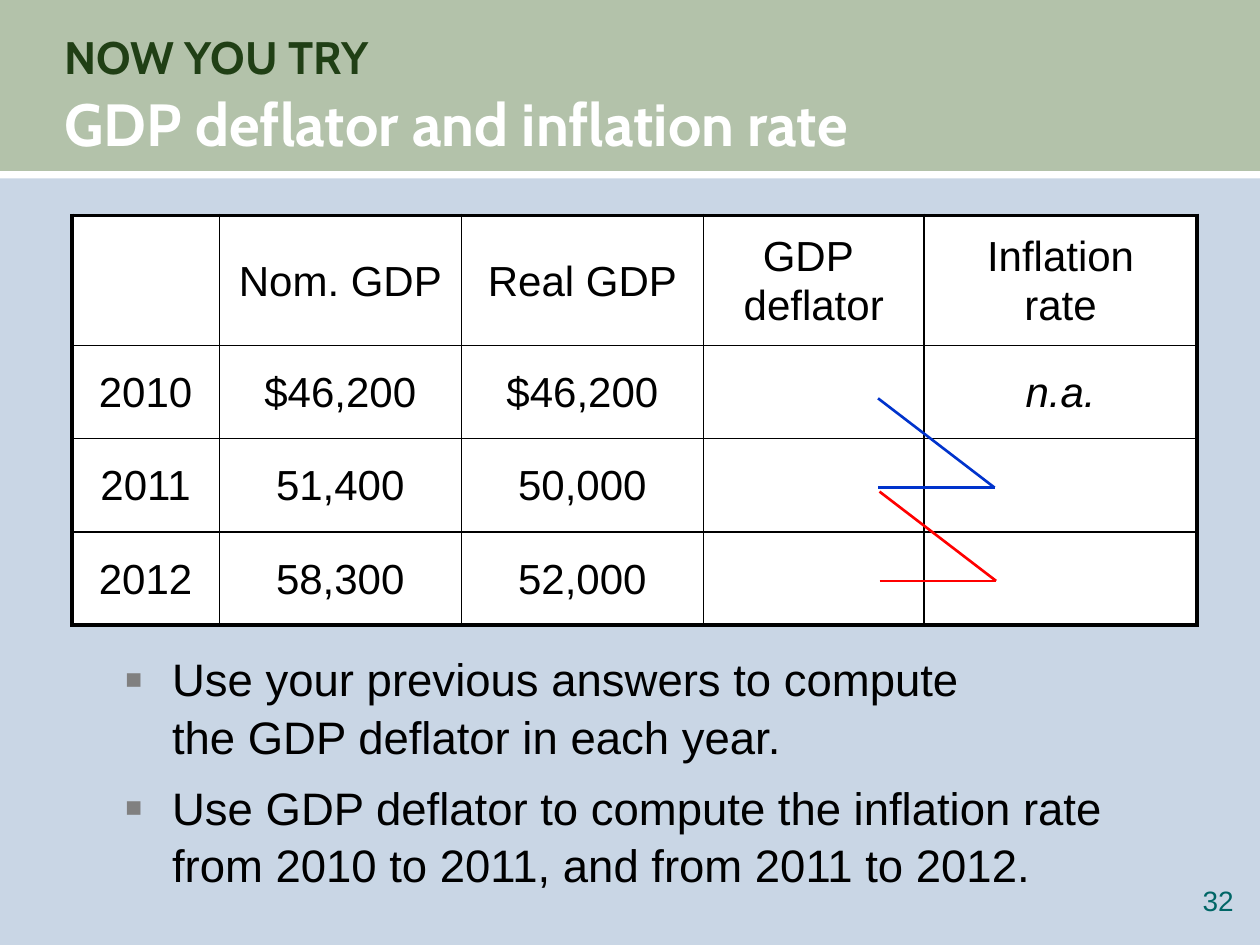
"""Build the exercise slide on the GDP deflator and the inflation rate."""
from dataclasses import dataclass

from lxml.etree import SubElement
from pptx import Presentation
from pptx.dml.color import RGBColor
from pptx.enum.shapes import MSO_CONNECTOR, MSO_SHAPE
from pptx.enum.text import MSO_ANCHOR, PP_ALIGN
from pptx.oxml.ns import qn
from pptx.slide import Slide
from pptx.table import _Cell
from pptx.text.text import TextFrame
from pptx.util import Cm, Pt


@dataclass(frozen=True)
class Theme:
    backdrop: str = "C9D6E5"
    header: str = "B3C2AA"
    white: str = "FFFFFF"
    kicker: str = "203F15"
    ink: str = "000000"
    bullet: str = "808080"
    page: str = "006666"
    first_period: str = "0033CC"
    second_period: str = "FF0000"
    heading_font: str = "Cabin"
    body_font: str = "Arial"
    heading_size: int = 34
    body_size: int = 26
    table_size: int = 24
    page_size: int = 16
    outer_border: float = 2.25
    inner_border: float = 1
    pointer_width: float = 1.5


@dataclass(frozen=True)
class Box:
    left: float
    top: float
    width: float
    height: float

    def lengths(self) -> tuple[Cm, Cm, Cm, Cm]:
        return Cm(self.left), Cm(self.top), Cm(self.width), Cm(self.height)


@dataclass(frozen=True)
class Pointer:
    left: float
    top: float
    colour: str


THEME = Theme()
COLUMN_WIDTHS = (2.97, 4.88, 4.88, 4.45, 5.5)
HEADER_HEIGHT, YEAR_HEIGHT = 2.62, 1.88
POINTER_WIDTH, POINTER_DROP = 2.35, 1.8
GDP_ROWS = (
    ("", "Nom. GDP", "Real GDP", "GDP \ndeflator", "Inflation\nrate"),
    ("2010", "$46,200", "$46,200", "", "n.a."),
    ("2011", "51,400", "50,000", "", ""),
    ("2012", "58,300", "52,000", "", ""),
)
POINTERS = (
    Pointer(17.7, 8.03, THEME.first_period),
    Pointer(17.73, 8.03 + YEAR_HEIGHT, THEME.second_period),
)
TASKS = (
    "Use your previous answers to compute \nthe GDP deflator in each year.",
    "Use GDP deflator to compute the inflation rate from 2010 to 2011, and from 2011 to 2012.",
)


def write(frame: TextFrame, text: str, *, size: float, colour: str = THEME.ink,
          font: str = THEME.body_font, bold: bool = False, italic: bool = False,
          align: PP_ALIGN = PP_ALIGN.LEFT, spacing: float = 1.05,
          before: float = 0, bulleted: bool = False) -> None:
    paragraph = frame.paragraphs[0]
    if paragraph.runs:
        paragraph = frame.add_paragraph()
    paragraph.alignment = align
    paragraph.line_spacing = spacing
    paragraph.space_before = Pt(before)
    for number, line in enumerate(text.split("\n")):
        if number:
            paragraph.add_line_break()
        run = paragraph.add_run()
        run.text = line
        run.font.name, run.font.size = font, Pt(size)
        run.font.bold, run.font.italic = bold, italic
        run.font.color.rgb = RGBColor.from_string(colour)
    if bulleted:
        properties = paragraph._p.get_or_add_pPr()
        properties.set("marL", str(Cm(0.96)))
        properties.set("indent", str(-Cm(0.96)))
        tint = SubElement(properties, qn("a:buClr"))
        SubElement(tint, qn("a:srgbClr"), val=THEME.bullet)
        SubElement(properties, qn("a:buSzPct"), val="120000")
        SubElement(properties, qn("a:buFont"), typeface=THEME.body_font)
        SubElement(properties, qn("a:buChar"), char="▪")


def add_frame(slide: Slide, box: Box, *, inset: bool = False,
              anchor: MSO_ANCHOR = MSO_ANCHOR.TOP) -> TextFrame:
    frame = slide.shapes.add_textbox(*box.lengths()).text_frame
    frame.word_wrap = True
    frame.vertical_anchor = anchor
    if not inset:
        frame.margin_left = frame.margin_right = 0
        frame.margin_top = frame.margin_bottom = 0
    return frame


def add_band(slide: Slide, box: Box, colour: str) -> None:
    band = slide.shapes.add_shape(MSO_SHAPE.RECTANGLE, *box.lengths())
    band.shadow.inherit = False
    band.fill.solid()
    band.fill.fore_color.rgb = RGBColor.from_string(colour)
    band.line.fill.background()


def style_cell(cell: _Cell, outer_sides: dict[str, bool]) -> None:
    properties = cell._tc.get_or_add_tcPr()
    for side, is_outer in outer_sides.items():
        width = THEME.outer_border if is_outer else THEME.inner_border
        border = SubElement(properties, qn(f"a:ln{side}"), w=str(Pt(width)))
        fill = SubElement(border, qn("a:solidFill"))
        SubElement(fill, qn("a:srgbClr"), val=THEME.ink)
    cell.fill.solid()
    cell.fill.fore_color.rgb = RGBColor.from_string(THEME.white)
    cell.vertical_anchor = MSO_ANCHOR.MIDDLE


def add_gdp_table(slide: Slide) -> None:
    heights = (HEADER_HEIGHT,) + (YEAR_HEIGHT,) * (len(GDP_ROWS) - 1)
    box = Box(1.45, 4.34, sum(COLUMN_WIDTHS), sum(heights))
    table = slide.shapes.add_table(len(heights), len(COLUMN_WIDTHS), *box.lengths()).table
    table.first_row = table.horz_banding = False
    for column, width in zip(table.columns, COLUMN_WIDTHS):
        column.width = Cm(width)
    for row, height in zip(table.rows, heights):
        row.height = Cm(height)
    last_row, last_column = len(heights) - 1, len(COLUMN_WIDTHS) - 1
    for r, entries in enumerate(GDP_ROWS):
        for c, entry in enumerate(entries):
            cell = table.cell(r, c)
            style_cell(cell, {"L": c == 0, "R": c == last_column,
                              "T": r == 0, "B": r == last_row})
            if entry:
                write(cell.text_frame, entry, size=THEME.table_size,
                      align=PP_ALIGN.CENTER, italic=entry == "n.a.")


def add_pointer(slide: Slide, pointer: Pointer) -> None:
    right, bottom = pointer.left + POINTER_WIDTH, pointer.top + POINTER_DROP
    for start_top in (pointer.top, bottom):
        stroke = slide.shapes.add_connector(
            MSO_CONNECTOR.STRAIGHT, Cm(pointer.left), Cm(start_top), Cm(right), Cm(bottom))
        stroke.line.color.rgb = RGBColor.from_string(pointer.colour)
        stroke.line.width = Pt(THEME.pointer_width)
        SubElement(stroke._element.spPr, qn("a:effectLst"))


def main() -> None:
    deck = Presentation()
    deck.slide_width, deck.slide_height = Cm(25.4), Cm(19.05)
    slide = deck.slides.add_slide(deck.slide_layouts[6])
    slide.background.fill.solid()
    slide.background.fill.fore_color.rgb = RGBColor.from_string(THEME.backdrop)

    add_band(slide, Box(0, -0.03, 25.4, 3.58), THEME.header)
    title = add_frame(slide, Box(1.3, 0.56, 22.91, 2.62), anchor=MSO_ANCHOR.MIDDLE)
    write(title, "NOW YOU TRY", size=THEME.body_size, colour=THEME.kicker,
          font=THEME.heading_font, bold=True)
    write(title, "GDP deflator and inflation rate", size=THEME.heading_size,
          colour=THEME.white, font=THEME.heading_font, bold=True)
    add_band(slide, Box(0, 3.45, 25.4, 0.15), THEME.white)

    page = add_frame(slide, Box(23.47, 17.81, 1.4, 0.81))
    write(page, "32", size=THEME.page_size, colour=THEME.page,
          align=PP_ALIGN.RIGHT, spacing=1.0)
    tasks = add_frame(slide, Box(2.26, 12.95, 21.16, 5.72), inset=True)
    for task in TASKS:
        write(tasks, task, size=THEME.body_size, before=8, bulleted=True)

    add_gdp_table(slide)
    for pointer in POINTERS:
        add_pointer(slide, pointer)
    deck.save("out.pptx")


if __name__ == "__main__":
    main()
